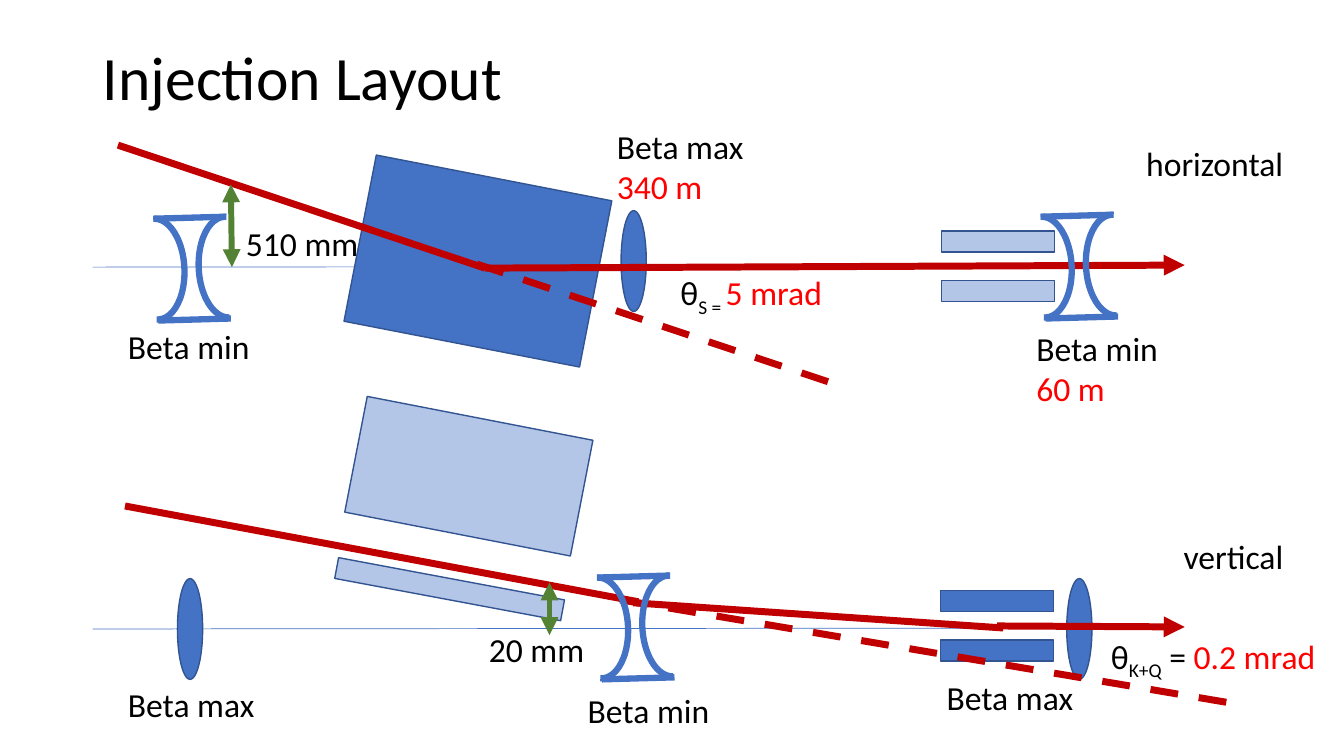
import pptx
import pptx.dml.color
import pptx.enum.dml
import pptx.enum.shapes
import pptx.enum.text
import pptx.oxml.ns
import pptx.util
from dataclasses import dataclass
from lxml import etree

Inches = pptx.util.Inches
Pt = pptx.util.Pt
SHAPE = pptx.enum.shapes.MSO_SHAPE
qn = pptx.oxml.ns.qn


@dataclass
class Theme:
    font: str = "Calibri"
    title_size: float = 44
    label_size: float = 24
    text: str = "000000"
    value: str = "FF0000"
    magnet: str = "4472C4"
    outline: str = "325491"
    beam: str = "C00000"
    offset: str = "548235"
    axis_width: float = 0.5
    outline_width: float = 1
    lens_width: float = 4.5
    beam_width: float = 5
    offset_width: float = 4.25
    pale: int = 40


def rgb(code):
    return pptx.dml.color.RGBColor.from_string(code)


def apply(target, values):
    for name, value in values.items():
        setattr(target, name, value)


class InjectionSlide:
    def __init__(self, deck, theme):
        self.theme = theme
        self.slide = deck.slides.add_slide(deck.slide_layouts[5])
        self.shapes = self.slide.shapes

    def style_run(self, run, size, color):
        apply(run.font, {"name": self.theme.font, "size": Pt(size), "bold": False})
        run.font.color.rgb = rgb(color)

    def title(self, text, left, top, width, height):
        heading = self.shapes.title
        apply(heading, {"left": Inches(left), "top": Inches(top),
                        "width": Inches(width), "height": Inches(height)})
        apply(heading.text_frame, {
            "text": text,
            "vertical_anchor": pptx.enum.text.MSO_ANCHOR.MIDDLE,
            "margin_bottom": Inches(0.7),
        })
        paragraph = heading.text_frame.paragraphs[0]
        apply(paragraph, {"alignment": pptx.enum.text.PP_ALIGN.LEFT, "line_spacing": 0.9})
        self.style_run(paragraph.runs[0], self.theme.title_size, self.theme.text)

    def label(self, left, top, width, *lines):
        height = 0.5 if len(lines) == 1 else 0.91
        frame = self.shapes.add_textbox(
            Inches(left), Inches(top), Inches(width), Inches(height)).text_frame
        apply(frame, {"word_wrap": False,
                      "auto_size": pptx.enum.text.MSO_AUTO_SIZE.SHAPE_TO_FIT_TEXT})
        for index, parts in enumerate(lines):
            paragraph = frame.add_paragraph() if index else frame.paragraphs[0]
            for text, kind in parts:
                run = paragraph.add_run()
                run.text = text
                color = self.theme.value if kind == "value" else self.theme.text
                self.style_run(run, self.theme.label_size, color)
                if kind == "sub":
                    run._r.get_or_add_rPr().set("baseline", "-25000")

    def line(self, start, end, color, width, dash=None, arrows=(), parent=None):
        points = [Inches(value) for value in (*start, *end)]
        connector = (parent or self.shapes).add_connector(
            pptx.enum.shapes.MSO_CONNECTOR.STRAIGHT, *points)
        connector.line.color.rgb = rgb(color)
        apply(connector.line, {"width": Pt(width), "dash_style": dash})
        outline = connector.line._get_or_add_ln()
        for arrow in arrows:
            etree.SubElement(outline, qn(f"a:{arrow}")).set("type", "triangle")
        etree.SubElement(connector._element.spPr, qn("a:effectLst"))

    def beam(self, start, end, **options):
        self.line(start, end, self.theme.beam, self.theme.beam_width, **options)

    def undeflected(self, start, end):
        self.beam(start, end, dash=pptx.enum.dml.MSO_LINE.DASH)

    def axis(self, start, end):
        self.line(start, end, self.theme.magnet, self.theme.axis_width)

    def offset(self, start, end):
        self.line(start, end, self.theme.offset, self.theme.offset_width,
                  arrows=("headEnd", "tailEnd"))

    def solid(self, kind, left, top, width, height, rotation=0, pale=False, parent=None):
        body = (parent or self.shapes).add_shape(
            kind, Inches(left), Inches(top), Inches(width), Inches(height))
        body.rotation = rotation
        body.shadow.inherit = False
        body.fill.solid()
        body.fill.fore_color.rgb = rgb(self.theme.magnet)
        body.line.color.rgb = rgb(self.theme.outline)
        body.line.width = Pt(self.theme.outline_width)
        if pale:
            color = body._element.spPr.find(qn("a:solidFill"))[0]
            etree.SubElement(color, qn("a:alpha")).set("val", str(self.theme.pale * 1000))

    def focusing_lens(self, left, top):
        self.solid(SHAPE.OVAL, left, top, 0.25, 1)

    def kicker(self, left, top, pale=False):
        plates = self.shapes.add_group_shape().shapes
        for row in (1, 0):
            self.solid(SHAPE.RECTANGLE, left, top + row * 0.49, 1.12, 0.21,
                       pale=pale, parent=plates)

    def defocusing_lens(self, left, top):
        lens = self.shapes.add_group_shape().shapes
        for dx, dy, rotation in ((0, 0.02, 357.3), (0.7, 0, 177.3)):
            arc = lens.add_shape(SHAPE.ARC, Inches(left + dx), Inches(top + dy),
                                 Inches(0.56), Inches(1))
            arc.adjustments[0] = 162
            arc.adjustments[1] = 55.322
            arc.rotation = rotation
            arc.shadow.inherit = False
            arc.fill.background()
            arc.line.color.rgb = rgb(self.theme.magnet)
            arc.line.width = Pt(self.theme.lens_width)
        for dx, dy in ((0.25, 0.02), (0.3, 1.03)):
            self.line((left + dx, top + dy), (left + dx + 0.72, top + dy - 0.02),
                      self.theme.magnet, self.theme.lens_width, parent=lens)


def main():
    deck = pptx.Presentation()
    apply(deck, {"slide_width": Inches(13.33), "slide_height": Inches(7.5)})
    layout = InjectionSlide(deck, Theme())
    layout.title("Injection Layout", 0.92, 0.4, 11.5, 1.45)

    layout.axis((0.92, 6.24), (11.41, 6.23))
    for left in (1.76, 10.58):
        layout.focusing_lens(left, 5.74)
    layout.defocusing_lens(1.27, 2.15)
    layout.kicker(9.33, 5.86)
    layout.axis((0.92, 2.65), (11.42, 2.64))
    layout.focusing_lens(6.16, 2.09)

    layout.beam((11.75, 6.22), (9.89, 6.21), arrows=("headEnd",))
    layout.beam((6.28, 5.98), (9.95, 6.23))
    layout.beam((1.24, 5.02), (6.33, 5.97))

    for left, top, width, *lines in (
        (2.34, 2.16, 1.32, [("510 mm", "")]),
        (4.75, 6.19, 1.15, [("20 mm", "")]),
        (6.65, 2.65, 1.69, [("θ", ""), ("S = ", "sub"), ("5 mrad", "value")]),
        (11.27, 1.37, 1.57, [("horizontal", "")]),
        (11.64, 5.27, 1.2, [("vertical", "")]),
        (10.18, 3.2, 1.42, [("Beta min", "")], [("60 m", "value")]),
        (5.73, 6.8, 1.42, [("Beta min", "")]),
        (6.02, 1.2, 1.47, [("Beta max", "")], [("340 m", "value")]),
        (9.29, 6.67, 1.47, [("Beta max", "")]),
        (1.17, 6.74, 1.47, [("Beta max", "")]),
        (1.17, 3.18, 1.42, [("Beta min", "")]),
        (10.92, 6.26, 2.3,
         [("θ", ""), ("K+Q", "sub"), (" = ", ""), ("0.2 mrad", "value")]),
    ):
        layout.label(left, top, width, *lines)

    septum = layout.shapes.add_group_shape().shapes
    layout.solid(SHAPE.RECTANGLE, 3.32, 5.74, 2.28, 0.21, 10.6, pale=True, parent=septum)
    layout.solid(SHAPE.RECTANGLE, 3.51, 4.14, 2.28, 1.17, 11, pale=True, parent=septum)
    layout.offset((5.45, 5.78), (5.45, 6.3))
    layout.solid(SHAPE.RECTANGLE, 3.55, 1.75, 2.38, 1.68, 11)

    layout.beam((11.75, 2.63), (4.81, 2.66), arrows=("headEnd",))
    layout.beam((1.17, 1.44), (4.81, 2.66))
    layout.undeflected((4.73, 2.62), (8.37, 3.84))
    layout.undeflected((6.15, 5.95), (12.24, 6.98))
    layout.kicker(9.34, 2.29, pale=True)
    layout.defocusing_lens(10.07, 2.13)
    layout.defocusing_lens(5.67, 5.71)
    layout.offset((2.29, 1.83), (2.3, 2.65))
    deck.save("out.pptx")


if __name__ == "__main__":
    main()
